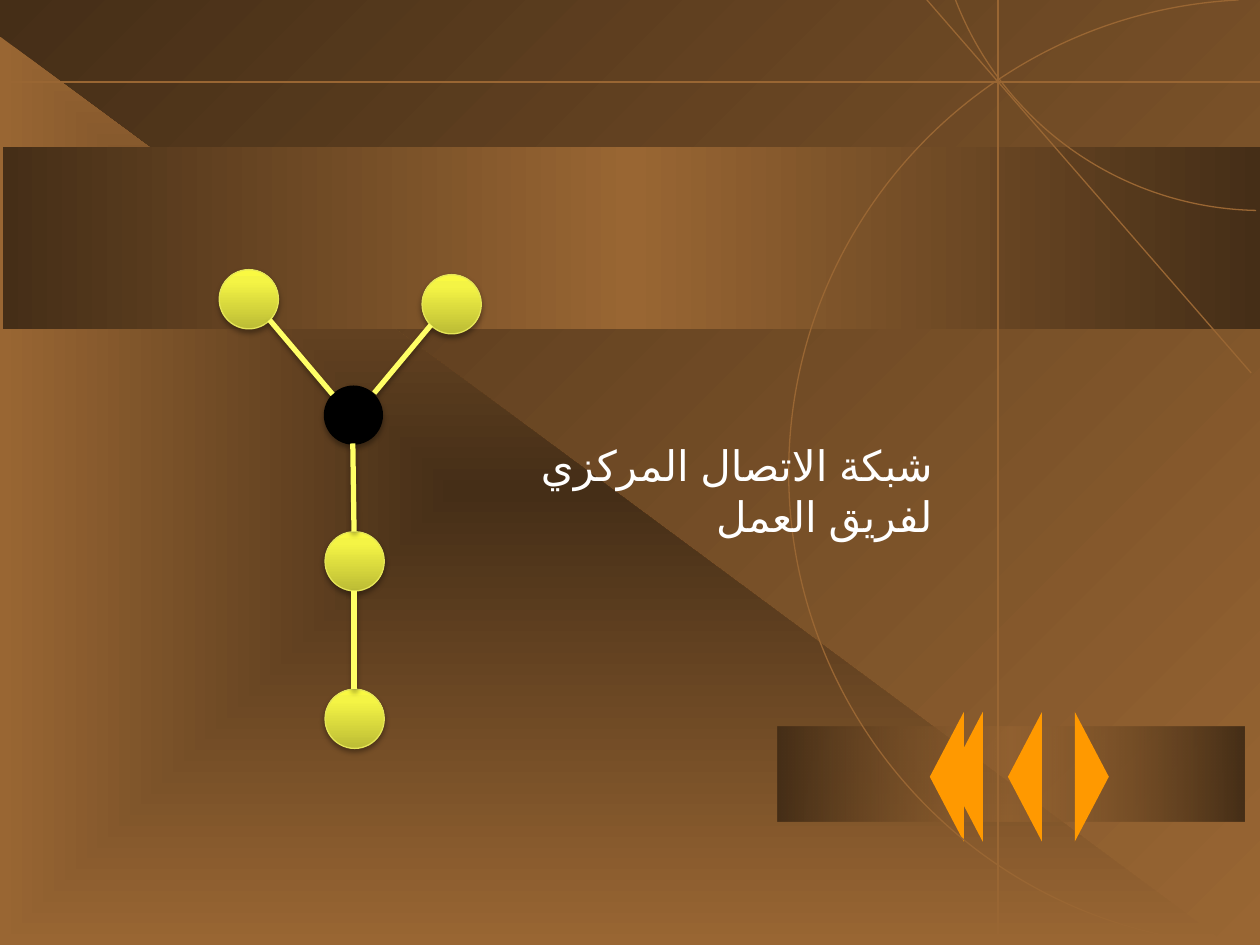
from lxml.etree import SubElement
from pptx import Presentation
from pptx.dml.color import RGBColor
from pptx.enum.shapes import MSO_CONNECTOR as Connector, MSO_SHAPE as Shape
from pptx.enum.text import MSO_AUTO_SIZE as AutoSize, PP_ALIGN as Align
from pptx.oxml import parse_xml
from pptx.oxml.ns import nsdecls, qn
from pptx.util import Inches, Pt

COLORS = {
    "dark": "452E17", "brown": "996633", "orange": "FF9900", "black": "000000",
    "white": "FFFFFF", "node_low": "BCBC35", "node_mid": "F4F445",
    "node_high": "F9F942", "node_edge": "E5E557", "link": "FFFF66",
}
BAND_STOPS = [(0, "dark", 100), (50, "brown", 100), (100, "dark", 100)]
FAINT_BAND_STOPS = [(0, "dark", 100), (50, "brown", 50), (100, "dark", 100)]
SLOPE_STOPS = [(0, "dark", 100), (100, "brown", 100)]
NODE_STOPS = [(0, "node_low", 100), (80, "node_mid", 100), (100, "node_high", 100)]
NODE_SIZE = 0.47


def color(name):
    """Return the named colour."""
    return RGBColor.from_string(COLORS[name])


def gradient(stops, angle=None):
    """Return a gradient fill: linear with an angle, else from the centre."""
    stop_xml = "".join(
        f'<a:gs pos="{position * 1000}"><a:srgbClr val="{COLORS[name]}">'
        f'<a:alpha val="{alpha * 1000}"/></a:srgbClr></a:gs>'
        for position, name, alpha in stops
    )
    if angle is None:
        direction = ('<a:path path="rect"><a:fillToRect l="50000" t="50000" '
                     'r="50000" b="50000"/></a:path>')
    else:
        direction = f'<a:lin ang="{angle * 60000}" scaled="0"/>'
    return parse_xml(
        f'<a:gradFill {nsdecls("a")} rotWithShape="1"><a:gsLst>{stop_xml}</a:gsLst>'
        f'{direction}</a:gradFill>'
    )


def set_gradient(fill, parent, stops, angle=None):
    """Put a gradient in place of the solid fill of the parent element."""
    fill.solid()
    parent.replace(parent.find(qn("a:solidFill")), gradient(stops, angle))


def add_shadow(effects):
    """Add a soft shadow below to an effect list."""
    shadow = SubElement(effects, qn("a:outerShdw"), blurRad=str(Pt(3.1)),
                        dist=str(Pt(1.8)), dir="5400000", rotWithShape="0")
    shade = SubElement(shadow, qn("a:srgbClr"), val=COLORS["black"])
    SubElement(shade, qn("a:alpha"), val="35000")


def add_shape(slide, kind, box, fill=None, stops=None, angle=None, rotation=0):
    """Add a preset shape with a solid or gradient fill and no outline."""
    shape = slide.shapes.add_shape(kind, *map(Inches, box))
    shape.shadow.inherit = False
    shape.rotation = rotation
    shape.line.fill.background()
    if stops:
        set_gradient(shape.fill, shape._element.spPr, stops, angle)
    else:
        shape.fill.solid()
        shape.fill.fore_color.rgb = color(fill)
    return shape


def add_line(slide, start, end, name="brown", width=0.75, shadow=False):
    """Add a straight line, with a shadow if asked."""
    line = slide.shapes.add_connector(
        Connector.STRAIGHT, *map(Inches, (*start, *end)))
    line.line.color.rgb = color(name)
    line.line.width = Pt(width)
    effects = SubElement(line._element.spPr, qn("a:effectLst"))
    if shadow:
        add_shadow(effects)


def add_curve(slide, start, points):
    """Add an open outline whose points, three by three, form cubic curves."""
    builder = slide.shapes.build_freeform(*map(Inches, start))
    builder.add_line_segments([tuple(map(Inches, point)) for point in points],
                              close=False)
    curve = builder.convert_to_shape()
    outline = next(curve._element.iter(qn("a:path")))
    segments = outline.findall(qn("a:lnTo"))
    for first in range(0, len(segments), 3):
        bezier = SubElement(outline, qn("a:cubicBezTo"))
        for segment in segments[first:first + 3]:
            bezier.append(segment[0])
            outline.remove(segment)
    curve.shadow.inherit = False
    curve.fill.background()
    curve.line.color.rgb = color("brown")
    curve.line.width = Pt(0.75)


def add_node(slide, left, top, hub=False):
    """Add a network member, black when it is the hub."""
    box = (left, top, NODE_SIZE, NODE_SIZE)
    if hub:
        node = add_shape(slide, Shape.OVAL, box, fill="black")
    else:
        node = add_shape(slide, Shape.OVAL, box, stops=NODE_STOPS, angle=270)
        node.line.color.rgb = color("node_edge")
        node.line.width = Pt(0.75)
    add_shadow(node._element.spPr.find(qn("a:effectLst")))


def add_caption(slide, text, box):
    """Add right-to-left Arabic text."""
    frame = slide.shapes.add_textbox(*map(Inches, box)).text_frame
    for name, value in {"word_wrap": True,
                        "auto_size": AutoSize.SHAPE_TO_FIT_TEXT}.items():
        setattr(frame, name, value)
    paragraph = frame.paragraphs[0]
    paragraph.alignment = Align.RIGHT
    paragraph._p.get_or_add_pPr().set("rtl", "1")
    run = paragraph.add_run()
    run.text = text
    for name, value in {"size": Pt(24), "name": "Arial"}.items():
        setattr(run.font, name, value)
    run.font.color.rgb = color("white")
    run._r.rPr.set("lang", "ar-SA")
    SubElement(run._r.rPr, qn("a:cs"), typeface="Arial")


def add_backdrop(slide):
    """Draw the background, bands, arrows, arcs and thin lines."""
    fill = slide.background.fill
    set_gradient(fill, slide._element.cSld.find(qn("p:bg")).find(qn("p:bgPr")),
                 SLOPE_STOPS, 45)
    add_shape(slide, Shape.RIGHT_TRIANGLE, (0, 0.29, 9.75, 7.21), stops=SLOPE_STOPS)
    add_shape(slide, Shape.RECTANGLE, (6.17, 5.77, 3.71, 0.75),
              stops=FAINT_BAND_STOPS, angle=0)
    add_shape(slide, Shape.RECTANGLE, (0.02, 1.17, 9.98, 1.44),
              stops=BAND_STOPS, angle=0)
    for left, rotation in ((7.62, 270), (7.15, 270), (7, 270), (8.15, 90)):
        add_shape(slide, Shape.ISOSCELES_TRIANGLE, (left, 6.03, 1.03, 0.27),
                  fill="orange", rotation=rotation)
    add_curve(slide, (9.83, 0), [(7.83, 0.1), (6.26, 1.75), (6.26, 3.75),
                                 (6.26, 5.76), (7.85, 7.42), (9.86, 7.5)])
    add_curve(slide, (7.58, -0.01), [(7.96, 0.99), (8.91, 1.65), (9.97, 1.67)])
    add_line(slide, (9.93, 2.96), (7.34, -0.02))
    add_line(slide, (7.92, -0.01), (7.92, 7.44))
    add_line(slide, (0, 0.65), (10, 0.65))


def add_network(slide):
    """Draw the members of the network and their links."""
    for left, top, hub in ((1.74, 2.14, False), (3.35, 2.18, False),
                           (2.57, 3.06, True), (2.58, 4.22, False),
                           (2.58, 5.47, False)):
        add_node(slide, left, top, hub)
    for start, end in (((2.97, 3.12), (3.42, 2.58)), ((2.64, 3.13), (2.14, 2.54)),
                       ((2.8, 3.52), (2.81, 4.22)), ((2.81, 4.69), (2.81, 5.47))):
        add_line(slide, start, end, "link", 3, shadow=True)


def main():
    """Build and save the presentation."""
    presentation = Presentation()
    presentation.slide_width = Inches(10)
    presentation.slide_height = Inches(7.5)
    slide = presentation.slides.add_slide(presentation.slide_layouts[6])
    add_backdrop(slide)
    add_network(slide)
    add_caption(slide, "شبكة الاتصال المركزي لفريق العمل", (3.75, 3.44, 3.75, 0.91))
    presentation.save("out.pptx")


if __name__ == "__main__":
    main()
